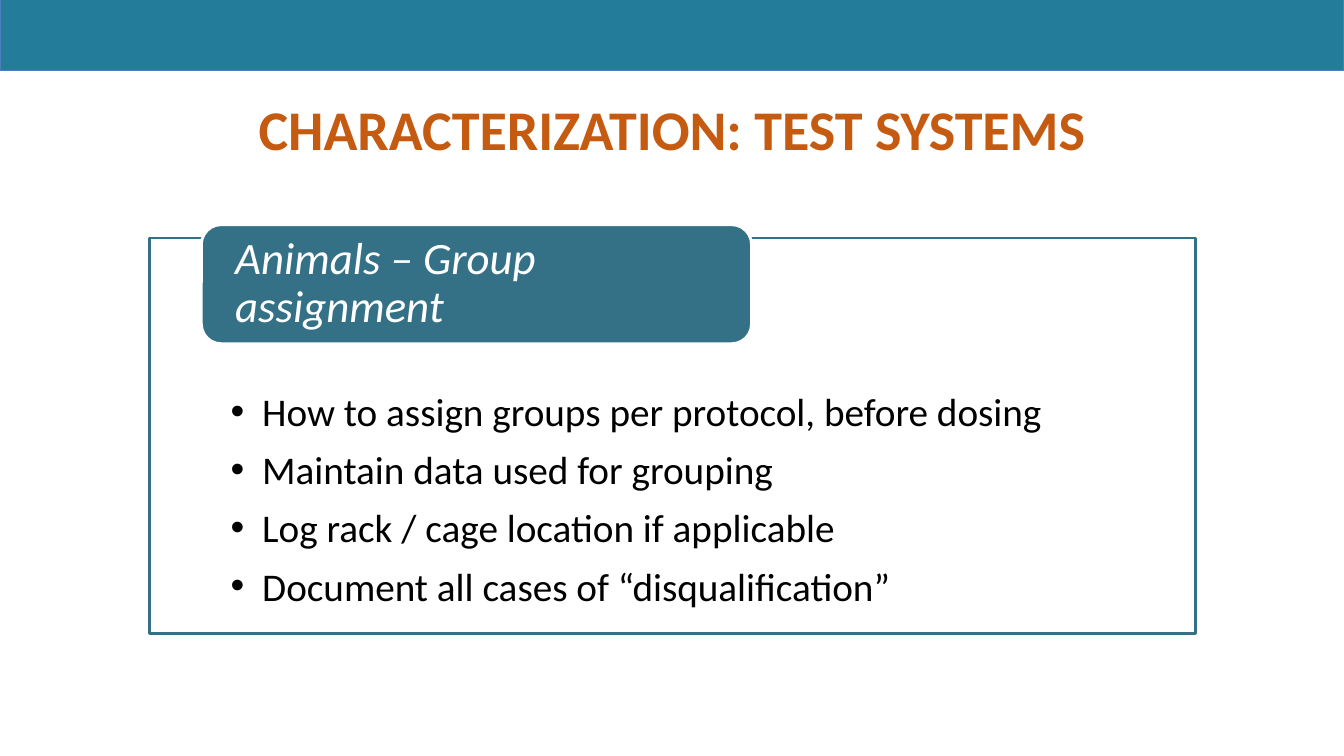
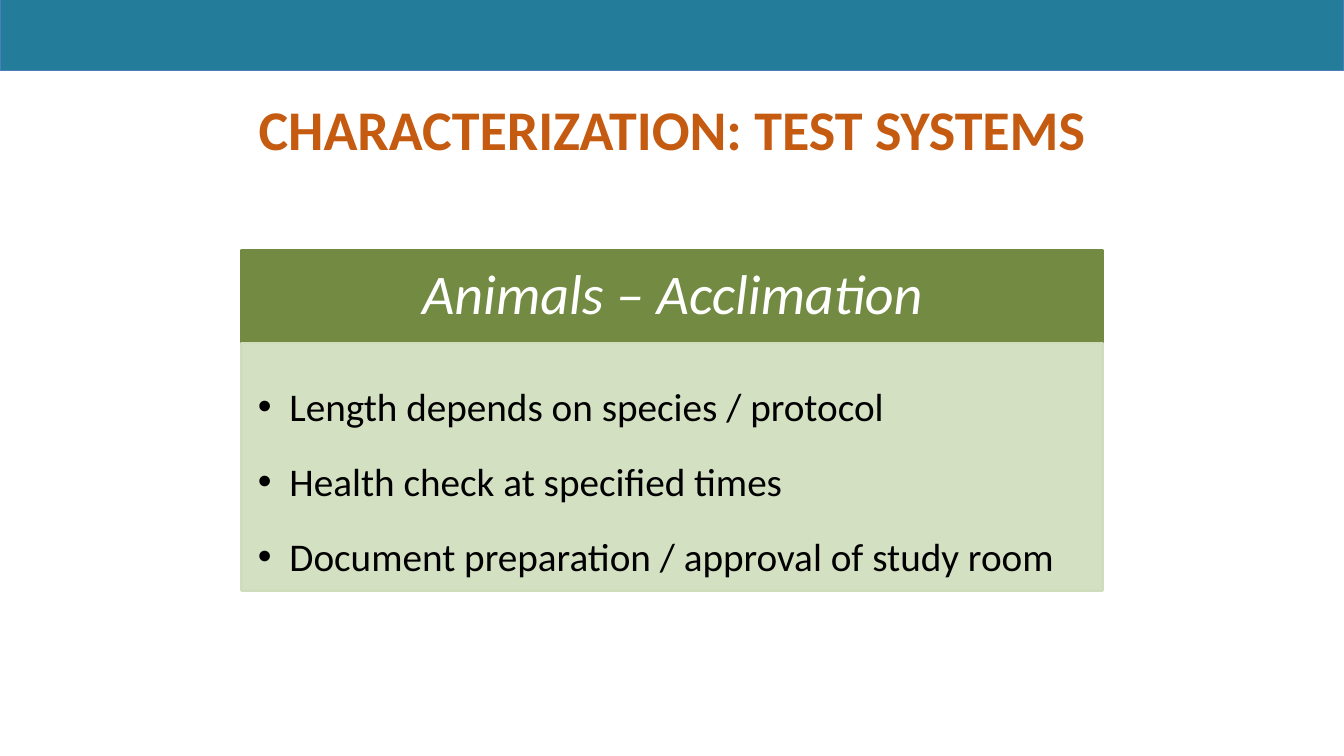
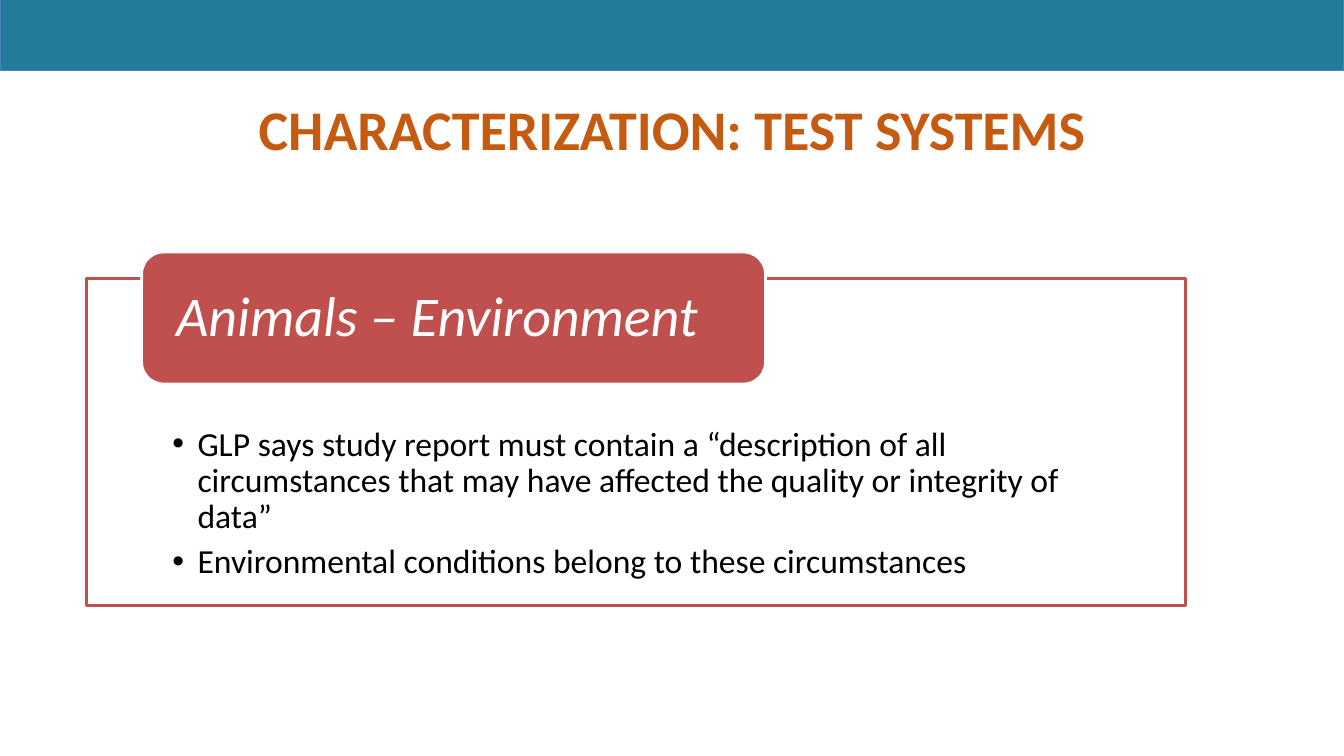
import pptx
import pptx.dml.color
import pptx.enum.shapes
import pptx.enum.text
import pptx.oxml
import pptx.oxml.ns
import pptx.util

Pt = pptx.util.Pt
Form = pptx.enum.shapes.MSO_SHAPE
Align = pptx.enum.text.PP_ALIGN
Anchor = pptx.enum.text.MSO_ANCHOR

# Shared style
WIDE, HIGH = 960, 540
FONT = "Calibri"
BAND, EDGE, TITLE = "237C9A", "4B7EBC", "C55A11"
TEAL, GREEN, PALE, RED = "357186", "738A42", "D0DDBC", "C0504D"
WHITE, BLACK = "FFFFFF", "000000"
HEAD = "CHARACTERIZATION: TEST SYSTEMS"


def node(tag, **attrs):
    """Make an empty drawing element."""
    item = pptx.oxml.parse_xml(f'<a:{tag} {pptx.oxml.ns.nsdecls("a")}/>')
    for key, value in attrs.items():
        item.set(key, str(value))
    return item


def paint(fill, tone, alpha=100):
    """Give a fill a solid colour, with opacity in percent."""
    fill.solid()
    fill.fore_color.rgb = pptx.dml.color.RGBColor.from_string(tone)
    return alpha


def fade(shape, alpha):
    """Set the opacity of the fill of a shape."""
    props = shape.element.spPr
    color = props.find(pptx.oxml.ns.qn("a:solidFill"))[0]
    color.append(node("alpha", val=alpha * 1000))


def block(slide, form, box, tone, line, weight=2):
    shape = slide.shapes.add_shape(form, *map(Pt, box))
    shape.shadow.inherit = False
    paint(shape.fill, tone)
    paint(shape.line.fill, line)
    shape.line.width = Pt(weight)
    return shape


def write(shape, lines, size, tone=BLACK, bold=False, slant=False, align=Align.LEFT,
          anchor=Anchor.TOP, inset=(0, 0, 0, 0), lead=1, after=0, hang=0):
    """Set the text of a shape; a hang above zero makes bullets."""
    frame = shape.text_frame
    frame.word_wrap = True
    frame.vertical_anchor = anchor
    (frame.margin_left, frame.margin_top,
     frame.margin_right, frame.margin_bottom) = map(Pt, inset)
    frame.text = "\n".join(lines)
    for para in frame.paragraphs:
        para.alignment = align
        para.line_spacing = lead
        para.space_after = Pt(after)
        if hang:
            props = para._p.get_or_add_pPr()
            props.set("marL", str(Pt(hang)))
            props.set("indent", str(-Pt(hang)))
            props.append(node("buFont", typeface="Arial"))
            props.append(node("buChar", char="•"))
        font = para.font
        font.name, font.size = FONT, Pt(size)
        font.bold, font.italic = bold, slant
        paint(font.fill, tone)


def start(deck):
    """Add a slide with the top band and the title."""
    slide = deck.slides.add_slide(deck.slide_layouts[6])
    block(slide, Form.RECTANGLE, (0, 0, WIDE, 50.4), BAND, EDGE, weight=0.75)
    title = slide.shapes.add_textbox(*map(Pt, (48, 64, WIDE - 96, 47)))
    write(title, [HEAD], 40, tone=TITLE, bold=True, align=Align.CENTER,
          inset=(7.2, 3.6, 7.2, 0))
    return slide


def label(shape, text, size, align=Align.LEFT):
    write(shape, [text], size, tone=WHITE, slant=True, align=align,
          anchor=Anchor.MIDDLE, inset=(20, 0, 20, 0), lead=0.9)


def framed(slide, box, tone, name, lines, tab, rise, big, **style):
    """Outlined list with a rounded tab that rises above its top edge."""
    left, top, wide, high = box
    body = block(slide, Form.RECTANGLE, box, WHITE, tone)
    fade(body, 90)
    side = wide * 0.078
    write(body, lines, inset=(side, 106.5, side, 15), **style)
    spot = (left + wide * 0.05, top - rise, *tab)
    label(block(slide, Form.ROUNDED_RECTANGLE, spot, tone, WHITE), name, big)


def stacked(slide, box, name, lines, cap):
    """Header bar on top of a tinted list."""
    left, top, wide, high = box
    bar = block(slide, Form.RECTANGLE, (left, top, wide, cap), GREEN, GREEN)
    label(bar, name, 40, align=Align.CENTER)
    rest = (left, top + cap, wide, high - cap)
    body = block(slide, Form.RECTANGLE, rest, PALE, PALE)
    fade(body, 90)
    write(body, lines, 28, inset=(11.5, 11.5, 16, 17), lead=1.5, after=3, hang=22.5)


def main():
    deck = pptx.Presentation()
    deck.slide_width, deck.slide_height = Pt(WIDE), Pt(HIGH)

    # Group assignment
    framed(start(deck), (106.5, 170, 747.4, 282.3), TEAL, "Animals – Group assignment", [
        "How to assign groups per protocol, before dosing",
        "Maintain data used for grouping",
        "Log rack / cage location if applicable",
        "Document all cases of “disqualification”",
    ], tab=(393, 85), rise=9.5, big=32, size=28, after=8, hang=22.5)

    # Acclimation
    stacked(start(deck), (172.8, 178.6, 614.9, 243.3), "Animals – Acclimation", [
        "Length depends on species / protocol",
        "Health check at specified times",
        "Document preparation / approval of study room",
    ], cap=66.4)

    # Environment
    framed(start(deck), (61.9, 198.7, 784.8, 234), RED, "Animals – Environment", [
        "GLP says study report must contain a “description of all circumstances "
        "that may have affected the quality or integrity of data”",
        "Environmental conditions belong to these circumstances",
    ], tab=(445.7, 94.3), rise=18.7, big=40, size=24, lead=0.9, after=6, hang=18)

    deck.save("out.pptx")


if __name__ == "__main__":
    main()
